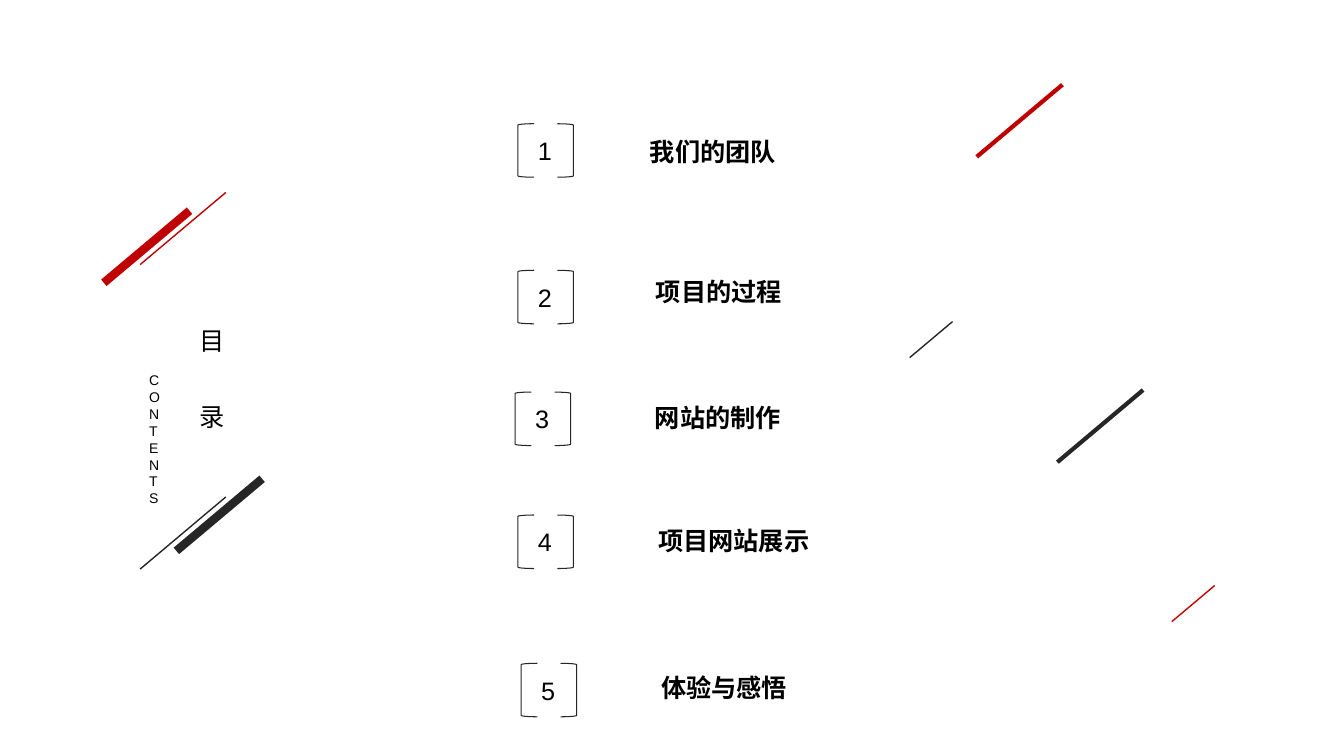
from lxml import etree
from pptx import Presentation
from pptx.dml.color import RGBColor
from pptx.enum.shapes import MSO_CONNECTOR, MSO_SHAPE
from pptx.enum.text import MSO_ANCHOR, MSO_AUTO_SIZE, PP_ALIGN
from pptx.oxml.ns import qn
from pptx.util import Pt

STRAIGHT = MSO_CONNECTOR.STRAIGHT
LEFT_BRACKET, RIGHT_BRACKET = MSO_SHAPE.LEFT_BRACKET, MSO_SHAPE.RIGHT_BRACKET
TOP, LEFT = MSO_ANCHOR.TOP, PP_ALIGN.LEFT
GROW = MSO_AUTO_SIZE.SHAPE_TO_FIT_TEXT
COLORS = {"red": "C00000", "dark": "262626", "text": "000000"}
FONT = "Arial"


def write(box, place, lines, size=18, bold=False, wrap=False, spacing=None):
    """Place a text shape and fill it with one paragraph per line."""
    box.left, box.top, box.width, box.height = (Pt(v) for v in place)
    frame = box.text_frame
    frame.word_wrap = wrap
    frame.auto_size = GROW
    frame.vertical_anchor = TOP
    for i, line in enumerate(lines):
        paragraph = frame.add_paragraph() if i else frame.paragraphs[0]
        paragraph.alignment = LEFT
        paragraph.line_spacing = spacing
        run = paragraph.add_run()
        run.text = line
        run.font.name = FONT
        run.font.size = Pt(size)
        run.font.bold = bold
        run.font.color.rgb = RGBColor.from_string(COLORS["text"])


prs = Presentation()
prs.slide_width, prs.slide_height = Pt(960), Pt(540)
slide = prs.slides.add_slide(prs.slide_layouts[5])
shapes = slide.shapes

# Slanted strokes: upper right end, share of the full length, colour, weight
STROKE_WIDTH, STROKE_HEIGHT = 61.2, 51.5
strokes = [
    (135.4, 150.5, 1, "red", 6),
    (161.3, 137.5, 1, "red", 1),
    (187.2, 342, 1, "dark", 6),
    (161.3, 355, 1, "dark", 1),
    (758.9, 60.5, 1, "red", 3),
    (680.4, 229.7, 0.5, "dark", 1),
    (867.6, 418.3, 0.5, "red", 1),
    (816.5, 278.6, 1, "dark", 3),
]
for x, y, share, color, weight in strokes:
    stroke = shapes.add_connector(
        STRAIGHT, Pt(x), Pt(y),
        Pt(x - STROKE_WIDTH * share), Pt(y + STROKE_HEIGHT * share))
    stroke.line.color.rgb = RGBColor.from_string(COLORS[color])
    stroke.line.width = Pt(weight)
    etree.SubElement(stroke._element.spPr, qn("a:effectLst"))

# Heading
write(shapes.title, (135.4, 196.6, 32.4, 116.6), ["目", "录"], spacing=2.5)
# The narrow box wraps after every letter
subtitle = shapes.add_textbox(0, 0, 0, 0)
write(subtitle, (99.4, 262.1, 18, 104.4), ["CONTENTS"], size=10, wrap=True)

# Chapters: bracket left and top, label left and top, label
BRACKET_WIDTH, BRACKET_HEIGHT, BRACKET_STEP = 11.5, 38.2, 28.1
CHARACTER_WIDTH, LABEL_HEIGHT = 18.2, 28.8
chapters = [
    (370, 88.4, 457.2, 93.6, "我们的团队"),
    (370, 193.1, 461.5, 193.7, "项目的过程"),
    (368, 280.1, 460.8, 283.7, "网站的制作"),
    (370, 367.9, 463, 371.5, "项目网站展示"),
    (372.3, 473.8, 465.1, 476.6, "体验与感悟"),
]
for number, (x, y, label_x, label_y, label) in enumerate(chapters, 1):
    write(shapes.add_textbox(0, 0, 0, 0),
          (x + 7.2, y + 4.7, 24.5, LABEL_HEIGHT), [str(number)])
    for side, kind in enumerate((LEFT_BRACKET, RIGHT_BRACKET)):
        bracket = shapes.add_shape(
            kind, Pt(x + side * BRACKET_STEP), Pt(y),
            Pt(BRACKET_WIDTH), Pt(BRACKET_HEIGHT))
        bracket.shadow.inherit = False
        bracket.fill.background()
        bracket.line.color.rgb = RGBColor.from_string(COLORS["dark"])
        bracket.line.width = Pt(0.75)
    label_width = len(label) * CHARACTER_WIDTH + 14.4
    write(shapes.add_textbox(0, 0, 0, 0),
          (label_x, label_y, label_width, LABEL_HEIGHT), [label], bold=True)

prs.save("out.pptx")
